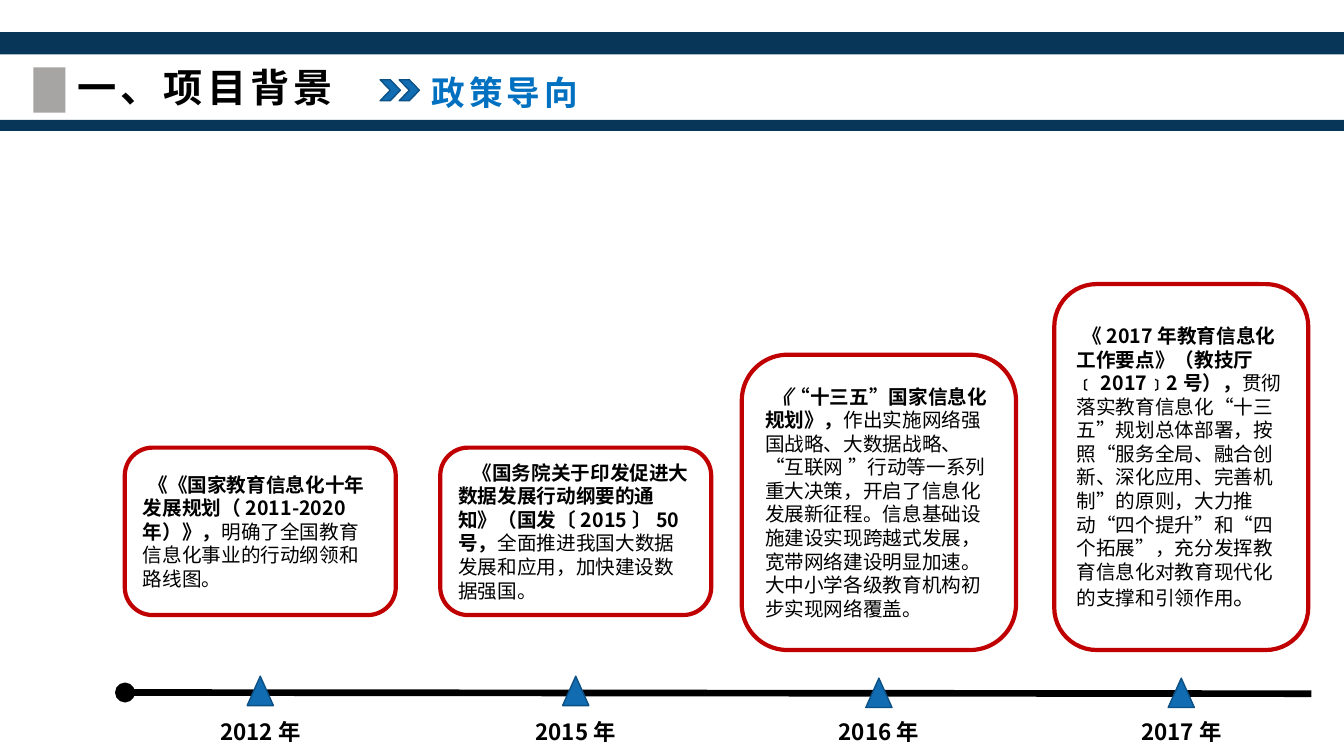
from dataclasses import dataclass

from lxml import etree
from pptx import Presentation
from pptx.dml.color import RGBColor
from pptx.enum.shapes import MSO_CONNECTOR, MSO_SHAPE
from pptx.enum.text import MSO_ANCHOR, MSO_AUTO_SIZE, PP_ALIGN
from pptx.oxml.ns import qn
from pptx.util import Cm, Pt

RECT, ROUND_RECT = MSO_SHAPE.RECTANGLE, MSO_SHAPE.ROUNDED_RECTANGLE
TRIANGLE, CHEVRON = MSO_SHAPE.ISOSCELES_TRIANGLE, MSO_SHAPE.CHEVRON
STRAIGHT = MSO_CONNECTOR.STRAIGHT
MIDDLE = MSO_ANCHOR.MIDDLE
LEFT, CENTER = PP_ALIGN.LEFT, PP_ALIGN.CENTER
GROW = MSO_AUTO_SIZE.SHAPE_TO_FIT_TEXT

FONT = "Noto Sans CJK SC"
BLACK = RGBColor(0x00, 0x00, 0x00)
WHITE = RGBColor(0xFF, 0xFF, 0xFF)
NAVY = RGBColor(0x08, 0x36, 0x59)
GREY = RGBColor(0x76, 0x71, 0x71)
RED = RGBColor(0xC0, 0x00, 0x00)
BLUE = RGBColor(0x11, 0x6C, 0xB2)
DARK_BLUE = RGBColor(0x0D, 0x50, 0x84)
SUBTITLE_BLUE = RGBColor(0x00, 0x70, 0xC0)


@dataclass
class Run:
    text: str
    size: float = 14
    bold: bool = False
    italic: bool = False
    color: RGBColor = BLACK
    spacing: float = 0


@dataclass
class Milestone:
    """A year on the timeline; its card, marker and label share the centre x (cm)."""
    year: str
    x: float
    top: float
    width: float
    height: float
    marker_top: float
    indent: float
    runs: list[Run]


MILESTONES = [
    Milestone("2012年", 6.56, 11.28, 6.83, 4.22, 17.04, 0.14, [
        Run("《《国家教育信息化十年发展规划（2011-2020年）》，", bold=True),
        Run("明确了全国教育信息化事业的行动纲领和路线图。")]),
    Milestone("2015年", 14.51, 11.28, 6.83, 4.22, 17.04, 0.36, [
        Run("《国务院关于印发促进大数据发展行动纲要的通知》（国发〔2015〕50号，", bold=True),
        Run("全面推进我国大数据发展和应用，加快建设数据强国。")]),
    Milestone("2016年", 22.15, 8.94, 6.91, 7.44, 17.09, 0.15, [
        Run("《", bold=True, italic=True),
        Run("“十三五”国家信息化规划》，", bold=True),
        Run("作出实施网络强国战略、大数据战略、“互联网 ”行动等一系列重大决策，"
            "开启了信息化发展新征程。信息基础设施建设实现跨越式发展，宽带网络建设明显加速。"
            "大中小学各级教育机构初步实现网络覆盖。")]),
    Milestone("2017年", 29.77, 7.16, 6.4, 9.22, 17.09, 0.14, [
        Run("《2017年教育信息化工作要点》（教技厅﹝2017﹞2号），", bold=True),
        Run("贯彻落实教育信息化“十三五”规划总体部署，按照“服务全局、融合创新、深化应用、"
            "完善机制”的原则，大力推动“四个提升”和“四个拓展”，"
            "充分发挥教育信息化对教育现代化的支撑和引领作用"),
        Run("。", size=16)]),
]


def add_box(s, kind, x: float, y: float, w: float, h: float, fill: RGBColor,
            line: RGBColor | None = None, line_pt: float = 1):
    sp = s.shapes.add_shape(kind, Cm(x), Cm(y), Cm(w), Cm(h))
    sp.shadow.inherit = False
    sp.fill.solid()
    sp.fill.fore_color.rgb = fill
    if line is None:
        sp.line.fill.background()
    else:
        sp.line.color.rgb = line
        sp.line.width = Pt(line_pt)
    return sp


def write(tf, runs: list[Run], align=LEFT, indent: float = 0) -> None:
    tf.word_wrap = True
    p = tf.paragraphs[0]
    p.alignment = align
    if indent:
        p._p.get_or_add_pPr().set("indent", str(Cm(indent)))
    for run in runs:
        r = p.add_run()
        r.text = run.text
        f = r.font
        f.size, f.bold, f.italic = Pt(run.size), run.bold, run.italic
        f.color.rgb = run.color
        f.name = FONT
        rPr = r._r.get_or_add_rPr()
        etree.SubElement(rPr, qn("a:ea")).set("typeface", FONT)
        if run.spacing:
            rPr.set("spc", str(int(run.spacing * 100)))


def add_heading(s, x: float, y: float, w: float, h: float, run: Run) -> None:
    tf = s.shapes.add_textbox(Cm(x), Cm(y), Cm(w), Cm(h)).text_frame
    write(tf, [run])
    tf.auto_size = GROW


def add_header(s) -> None:
    for y, h in ((3.02, 0.28), (0.81, 0.56)):
        add_box(s, RECT, -0.15, y, 34.16, h, NAVY)
    block = add_box(s, RECT, 0.84, 1.7, 0.81, 1.14, GREY)
    clr = block.fill._xPr.find(f".//{qn('a:srgbClr')}")
    etree.SubElement(clr, qn("a:alpha")).set("val", "64000")
    add_heading(s, 1.7, 1.47, 10.77, 1.45, Run("一、项目背景", 28, True, spacing=3))
    add_heading(s, 10.62, 1.7, 13.23, 1.27,
                Run("政策导向", 24, True, color=SUBTITLE_BLUE, spacing=3))
    for x in (10.06, 9.58):
        add_box(s, CHEVRON, x, 2.01, 0.51, 0.53, BLUE, DARK_BLUE)


def add_axis(s) -> None:
    axis = s.shapes.add_connector(STRAIGHT, Cm(3.15), Cm(17.45), Cm(33.05), Cm(17.48))
    axis.line.color.rgb = BLACK
    axis.line.width = Pt(4.75)
    etree.SubElement(axis.line._get_or_add_ln(), qn("a:headEnd")).set("type", "oval")
    etree.SubElement(axis._element.spPr, qn("a:effectLst"))


def add_milestone(s, m: Milestone) -> None:
    card = add_box(s, ROUND_RECT, m.x - m.width / 2, m.top, m.width, m.height, WHITE, RED, 3)
    card.text_frame.vertical_anchor = MIDDLE
    write(card.text_frame, m.runs, indent=m.indent)

    add_box(s, TRIANGLE, m.x - 0.33, m.marker_top, 0.66, 0.74, BLUE, DARK_BLUE)

    label = s.shapes.add_textbox(Cm(m.x - 1.2), Cm(17.95), Cm(2.4), Cm(0.95))
    tf = label.text_frame
    tf.margin_left = tf.margin_right = tf.margin_top = tf.margin_bottom = 0
    tf.vertical_anchor = MIDDLE
    write(tf, [Run(m.year, 16, True)], CENTER)


def main() -> None:
    prs = Presentation()
    prs.slide_width, prs.slide_height = Cm(33.87), Cm(19.05)
    s = prs.slides.add_slide(prs.slide_layouts[6])
    add_header(s)
    add_axis(s)
    for m in MILESTONES:
        add_milestone(s, m)
    prs.save("out.pptx")


if __name__ == "__main__":
    main()
